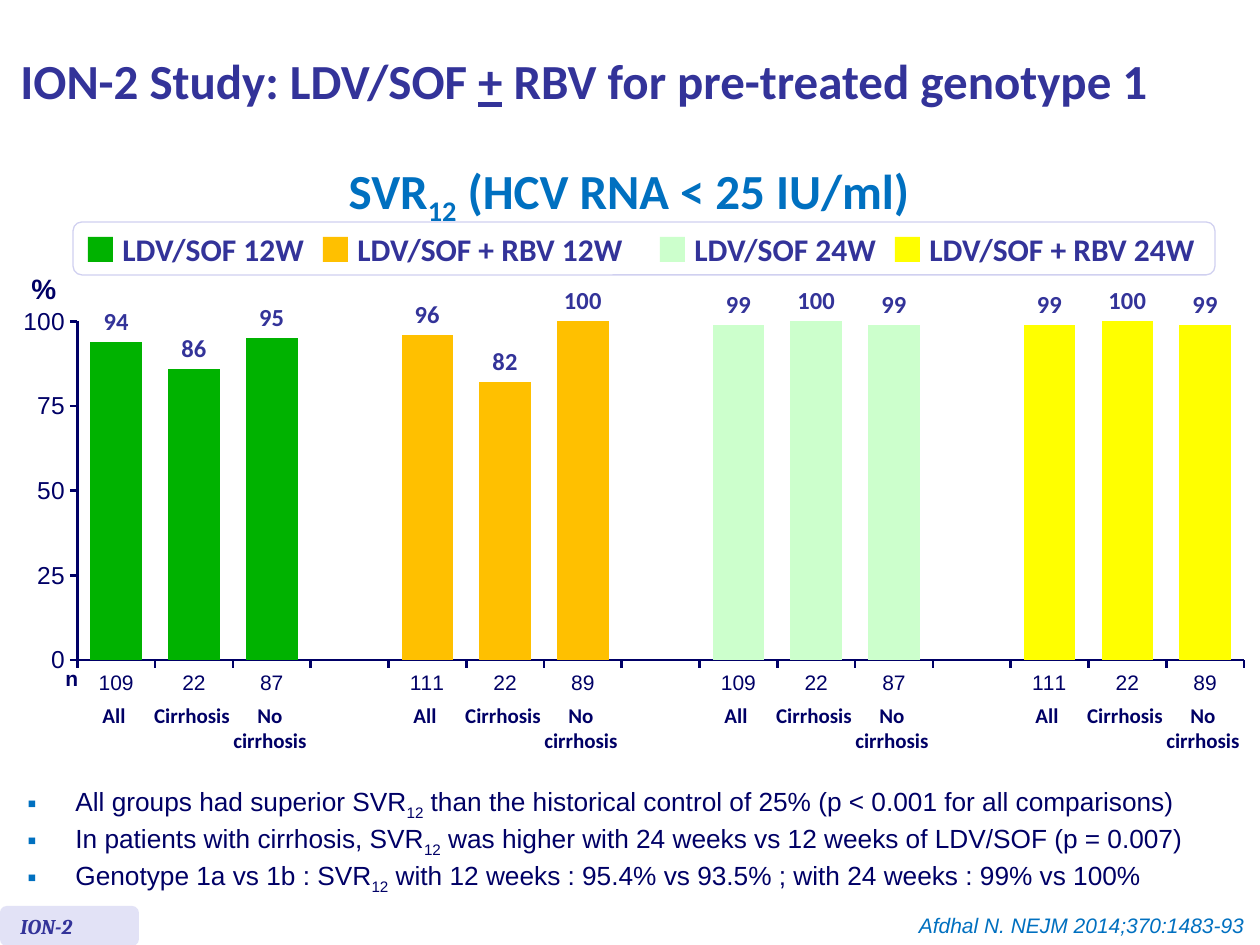
from dataclasses import dataclass, field

from lxml import etree
from pptx import Presentation
from pptx import util as u
from pptx.chart.data import CategoryChartData
from pptx.dml.color import RGBColor
from pptx.enum import chart as ch
from pptx.enum import shapes, text
from pptx.oxml import parse_xml
from pptx.oxml.ns import nsdecls, qn

SCALE = 914400 / 126
C = {
    "navy": "000066", "indigo": "333399", "blue": "0070C0", "white": "FFFFFF",
    "tag": "E2E2F6", "frame": "D0D0F0", "green": "00B200", "amber": "FFC000",
    "mint": "CCFFCC", "yellow": "FFFF00",
}
ALIGN = {"l": text.PP_ALIGN.LEFT, "c": text.PP_ALIGN.CENTER, "r": text.PP_ALIGN.RIGHT}


@dataclass
class Run:
    text: str
    sub: bool = False
    underline: bool = False


@dataclass
class Label:
    box: tuple[int, int, int, int]
    paras: list[list[Run]]
    color: str
    fmt: dict = field(default_factory=dict)
    align: str = "l"
    wrap: bool = False
    middle: bool = False
    bullet: bool = False


@dataclass
class Arm:
    name: str
    color: str
    swatch_x: int
    text_w: int
    sizes: list[int]
    rates: list[int]


def px(n: float) -> int:
    return u.Emu(round(n * SCALE))


def rgb(name: str) -> RGBColor:
    return RGBColor.from_string(C[name])


def font(name: str, size: int, **extra) -> dict:
    return {"name": name, "size": u.Pt(size), **extra}


def style(f, fmt: dict, color: str) -> None:
    for key, value in fmt.items():
        setattr(f, key, value)
    f.color.rgb = rgb(color)


def add_bullet(p) -> None:
    pPr = p._p.get_or_add_pPr()
    pPr.set("marL", str(px(48)))
    pPr.set("indent", str(-px(48)))
    color = etree.SubElement(pPr, qn("a:buClr"))
    etree.SubElement(color, qn("a:srgbClr"), val=C["blue"])
    etree.SubElement(pPr, qn("a:buFont"), typeface="Arial")
    etree.SubElement(pPr, qn("a:buChar"), char="▪")


def draw_label(s, lb: Label) -> None:
    tf = s.shapes.add_textbox(*map(px, lb.box)).text_frame
    tf.word_wrap = lb.wrap
    if lb.middle:
        tf.vertical_anchor = text.MSO_ANCHOR.MIDDLE
    for i, runs in enumerate(lb.paras):
        p = tf.add_paragraph() if i else tf.paragraphs[0]
        p.alignment = ALIGN[lb.align]
        if i:
            p.space_before = u.Pt(0.7)
        if lb.bullet:
            add_bullet(p)
        for j, line in enumerate(runs):
            for k, part in enumerate(line.text.split("\n")):
                if k:
                    p.add_line_break()
                r = p.add_run()
                r.text = part
                style(r.font, lb.fmt, lb.color)
                if line.underline:
                    r.font.underline = True
                if line.sub:
                    r._r.get_or_add_rPr().set("baseline", "-25000")


def draw_box(s, kind, box: tuple[int, int, int, int], fill: str, line: str = ""):
    sp = s.shapes.add_shape(kind, *map(px, box))
    sp.shadow.inherit = False
    sp.fill.solid()
    sp.fill.fore_color.rgb = rgb(fill)
    if line:
        sp.line.color.rgb = rgb(line)
        sp.line.width = u.Pt(0.75)
    else:
        sp.line.fill.background()


def draw_chart(s, arms: list[Arm]) -> None:
    cats, vals, colors = [], [], []
    for arm in arms:
        if cats:
            cats.append("")
            vals.append(None)
            colors.append(None)
        cats += map(str, arm.sizes)
        vals += arm.rates
        colors += [arm.color] * len(arm.rates)
    data = CategoryChartData()
    data.categories = cats
    data.add_series("SVR12 (%)", vals)
    chart = s.shapes.add_chart(ch.XL_CHART_TYPE.COLUMN_CLUSTERED,
                               *map(px, (3, 275, 1260, 431)), data).chart
    chart.has_legend = chart.has_title = False
    style(chart.font, font("Arial", 18), "navy")

    for axis, size in ((chart.category_axis, 12), (chart.value_axis, 14)):
        axis.has_major_gridlines = False
        axis.major_tick_mark = ch.XL_TICK_MARK.OUTSIDE
        axis.format.line.color.rgb = rgb("navy")
        axis.format.line.width = u.Pt(1.5)
        style(axis.tick_labels.font, font("Arial", size), "navy")
    scale = {"minimum_scale": 0, "maximum_scale": 100, "major_unit": 25}
    for key, value in scale.items():
        setattr(chart.value_axis, key, value)

    plot = chart.plots[0]
    plot.gap_width = 51
    plot.vary_by_categories = False
    series = plot.series[0]
    series.format.fill.solid()
    series.format.fill.fore_color.rgb = rgb("green")
    for i, color in enumerate(colors):
        if color:
            fill = series.points[i].format.fill
            fill.solid()
            fill.fore_color.rgb = rgb(color)
    labels = series.data_labels
    labels.show_value = True
    labels.position = ch.XL_LABEL_POSITION.OUTSIDE_END
    style(labels.font, font("Calibri", 14, bold=True), "indigo")

    area = chart._chartSpace.chart.plotArea
    for old in area.findall(qn("c:layout")):
        area.remove(old)
    places = {"x": 0.059, "y": 0.108, "w": 0.926, "h": 0.786}
    modes = '<c:layoutTarget val="inner"/><c:xMode val="edge"/><c:yMode val="edge"/>'
    sizes = "".join(f'<c:{k} val="{v}"/>' for k, v in places.items())
    area.insert(0, parse_xml(f'<c:layout {nsdecls("c")}><c:manualLayout>{modes}{sizes}'
                             "</c:manualLayout></c:layout>"))


def main() -> None:
    prs = Presentation()
    prs.slide_width, prs.slide_height = px(1260), px(945)
    s = prs.slides.add_slide(prs.slide_layouts[6])
    rect, rounded = shapes.MSO_SHAPE.RECTANGLE, shapes.MSO_SHAPE.ROUNDED_RECTANGLE
    heading = font("Calibri", 28, bold=True)
    small = font("Calibri", 12, bold=True)
    arms = [
        Arm("LDV/SOF 12W", "green", 88, 213, [109, 22, 87], [94, 86, 95]),
        Arm("LDV/SOF + RBV 12W", "amber", 323, 297, [111, 22, 89], [96, 82, 100]),
        Arm("LDV/SOF 24W", "mint", 660, 213, [109, 22, 87], [99, 100, 99]),
        Arm("LDV/SOF + RBV 24W", "yellow", 895, 297, [111, 22, 89], [99, 100, 99]),
    ]
    subgroups = [("All", 50, 38), ("Cirrhosis", 102, 38), ("No\ncirrhosis", 100, 63)]
    findings = [
        ("All groups had superior SVR",
         " than the historical control of 25% (p < 0.001 for all comparisons)"),
        ("In patients with cirrhosis, SVR",
         " was higher with 24 weeks vs 12 weeks of LDV/SOF (p = 0.007)"),
        ("Genotype 1a vs 1b : SVR",
         " with 12 weeks : 95.4% vs 93.5% ; with 24 weeks : 99% vs 100%"),
    ]

    draw_box(s, rounded, (0, 906, 139, 40), "tag")
    draw_box(s, rounded, (73, 222, 1142, 53), "white", "frame")
    draw_chart(s, arms)

    labels = [
        Label((8, 907, 170, 38), [[Run("ION-2")]], "indigo",
              font("Cambria", 12, bold=True, italic=True), wrap=True),
        Label((8, 4, 1239, 152),
              [[Run("ION-2 Study: LDV/SOF "), Run("+", underline=True),
                Run("\u00a0RBV for pre-treated genotype 1")]],
              "indigo", heading, wrap=True, middle=True),
        Label((777, 906, 480, 38), [[Run("Afdhal N. NEJM 2014;370:1483-93")]], "blue",
              font("Arial", 12, italic=True), align="r", wrap=True),
        Label((326, 154, 606, 72),
              [[Run("SVR"), Run("12", sub=True), Run(" (HCV RNA < 25 IU/ml)")]],
              "blue", heading, align="c"),
        Label((53, 659, 39, 38), [[Run("n")]], "navy", font("Arial", 12, bold=True)),
        Label((19, 265, 50, 47), [[Run("%")]], "navy", font("Arial", 16, bold=True)),
        Label((15, 779, 1242, 122),
              [[Run(a), Run("12", sub=True), Run(b)] for a, b in findings],
              "navy", font("Arial", 15), wrap=True, bullet=True),
    ]
    for i, arm in enumerate(arms):
        draw_box(s, rect, (arm.swatch_x, 237, 25, 25), arm.color)
        labels.append(Label((arm.swatch_x + 22, 224, arm.text_w, 50), [[Run(arm.name)]],
                            "indigo", font("Calibri", 18, bold=True)))
        for j, (name, w, h) in enumerate(subgroups):
            center = 114 + 311 * i + 78 * j
            labels.append(Label((center - w // 2, 696, w, h), [[Run(name)]],
                                "navy", small, align="c"))
    for lb in labels:
        draw_label(s, lb)
    prs.save("out.pptx")


if __name__ == "__main__":
    main()
